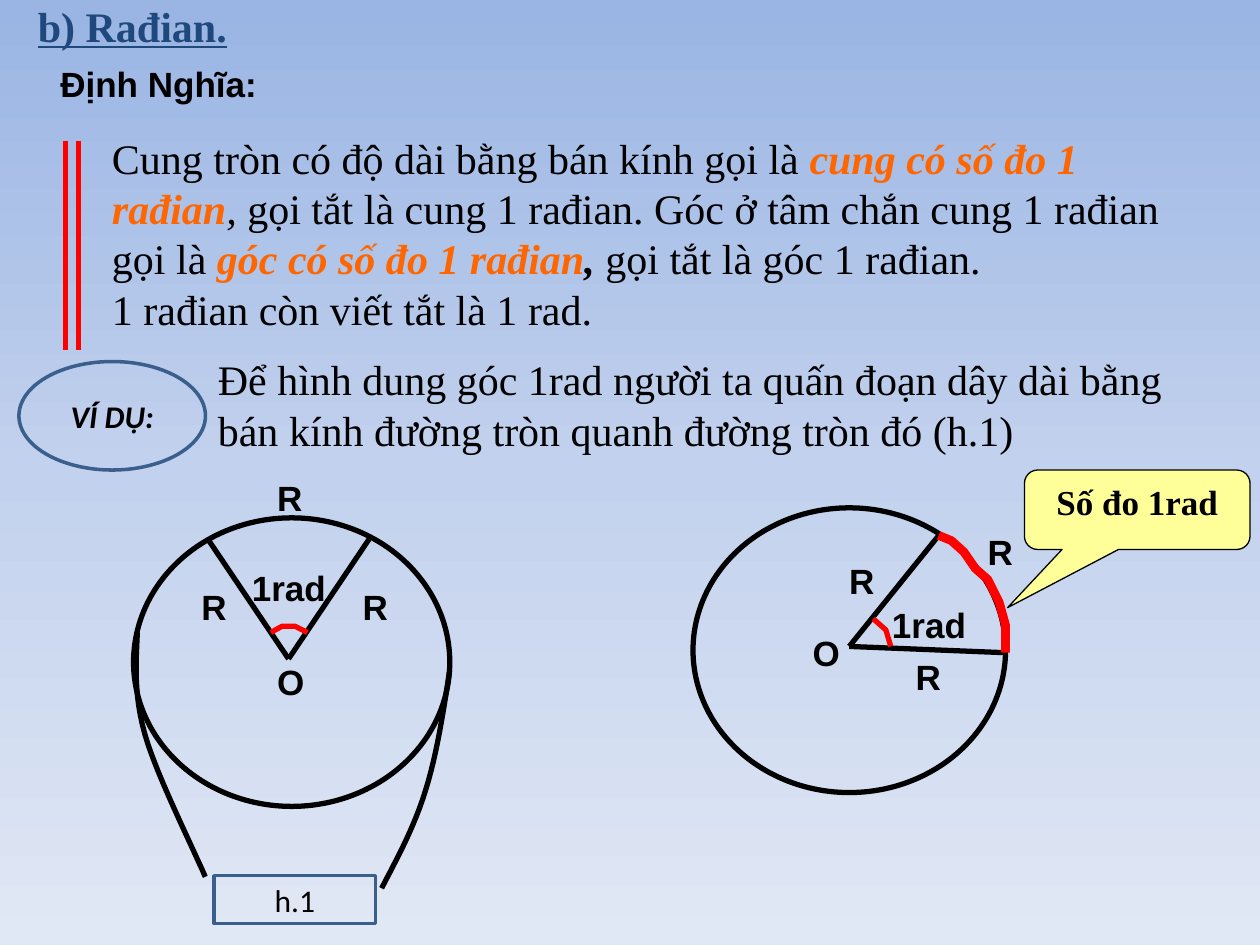
from copy import deepcopy

from lxml import etree
from pptx import Presentation
from pptx.dml.color import RGBColor
from pptx.enum import shapes, text
from pptx.oxml.ns import qn
from pptx.util import Pt

BLACK = RGBColor(0x00, 0x00, 0x00)
RED = RGBColor(0xFF, 0x00, 0x00)
ORANGE = RGBColor(0xFF, 0x66, 0x00)
NAVY = RGBColor(0x1F, 0x49, 0x7D)
STEEL = RGBColor(0x3A, 0x5F, 0x8C)
YELLOW = RGBColor(0xFF, 0xFF, 0x99)
SKY = [RGBColor(0x9A, 0xB5, 0xE4), RGBColor(0xC2, 0xD1, 0xED), RGBColor(0xE1, 0xE8, 0xF5)]

BODY = {"name": "Times New Roman", "size": Pt(24), "color": BLACK}
TERM = {**BODY, "bold": True, "italic": True, "color": ORANGE}
HEADING = {**BODY, "bold": True, "underline": True, "color": NAVY}
CALLOUT = {**BODY, "size": Pt(20), "bold": True}
LABEL = {"name": "Arial", "size": Pt(20), "bold": True, "color": BLACK}
CAPTION = {"name": "Calibri", "size": Pt(18), "color": BLACK}
SHAPE = shapes.MSO_SHAPE


def write(shape, paragraphs, align=text.PP_ALIGN.LEFT, anchor=text.MSO_ANCHOR.TOP):
    """Each paragraph is a list of (wording, format) pairs."""
    frame = shape.text_frame
    frame.vertical_anchor = anchor
    for index, spans in enumerate(paragraphs):
        para = frame.add_paragraph() if index else frame.paragraphs[0]
        para.alignment = align
        for wording, style in spans:
            span = para.add_run()
            span.text = wording
            for name, value in style.items():
                if name == "color":
                    span.font.color.rgb = value
                else:
                    setattr(span.font, name, value)


def add_text(page, box, paragraphs, wrap=True):
    shape = page.shapes.add_textbox(*map(Pt, box))
    shape.text_frame.word_wrap = wrap
    shape.text_frame.auto_size = text.MSO_AUTO_SIZE.SHAPE_TO_FIT_TEXT
    write(shape, paragraphs)


def outline(shape, color, width, fill=None):
    shape.shadow.inherit = False
    if fill is None:
        shape.fill.background()
    else:
        shape.fill.solid()
        shape.fill.fore_color.rgb = fill
    shape.line.color.rgb = color
    shape.line.width = Pt(width)


def add_outlined(page, kind, box, color, width, fill=None):
    shape = page.shapes.add_shape(kind, *map(Pt, box))
    outline(shape, color, width, fill)
    return shape


def add_line(page, start, end, color=BLACK, width=3):
    line = page.shapes.add_connector(shapes.MSO_CONNECTOR.STRAIGHT, *map(Pt, (*start, *end)))
    line.line.color.rgb = color
    line.line.width = Pt(width)
    etree.SubElement(line.element.spPr, qn("a:effectLst"))


def add_path(page, points, color=BLACK, width=3):
    first, *rest = [(Pt(x), Pt(y)) for x, y in points]
    builder = page.shapes.build_freeform(*first)
    builder.add_line_segments(rest, close=False)
    outline(builder.convert_to_shape(), color, width)


def bezier(points, steps=12):
    """Points along joined cubic curves, given as start then three points each."""
    curve = [points[0]]
    for k in range(0, len(points) - 1, 3):
        for step in range(1, steps + 1):
            t = step / steps
            weights = ((1 - t) ** 3, 3 * t * (1 - t) ** 2, 3 * t * t * (1 - t), t ** 3)
            curve.append(tuple(sum(w * p[axis] for w, p in zip(weights, points[k:k + 4]))
                               for axis in (0, 1)))
    return curve


def paint_background(page):
    fill = page.background.fill
    fill.gradient()
    fill.gradient_angle = 270
    stops = page.element.xpath(".//a:gsLst")[0]
    stops.insert(1, deepcopy(stops[0]))
    for stop, color, position in zip(fill.gradient_stops, SKY, (0, 0.5, 1)):
        stop.color.rgb = color
        stop.position = position


def heading(page, box):
    title = page.shapes.title
    title.left, title.top, title.width, title.height = map(Pt, box)
    write(title, [[("b) Rađian.", HEADING)]])


def definition(page, box):
    left, top, width, height = box
    add_text(page, (left, top, 230, 32), [[("Định Nghĩa:", LABEL)]])
    # Double rule beside the definition
    for x in (left + 10, left + 17.5):
        add_line(page, (x, top + 48), (x, top + height), RED, 2.75)
    add_text(page, (left + 29.5, top + 39.6, width - 29.5, 124), [
        [("Cung tròn có độ dài bằng bán kính gọi là ", BODY),
         ("cung có số đo 1 rađian", TERM),
         (", ", {**BODY, "italic": True}),
         ("gọi tắt là cung 1 rađian. Góc ở tâm chắn cung 1 rađian gọi là ", BODY),
         ("góc có số đo 1 rađian", TERM),
         (", ", {**TERM, "color": BLACK}),
         ("gọi tắt là góc 1 rađian.", BODY)],
        [("1 rađian còn viết tắt là 1 rad.", BODY)]])


def example(page, box):
    left, top, width, height = box
    add_text(page, (left + 106.6, top, width - 106.6, height),
             [[("Để hình dung góc 1rad người ta quấn đoạn dây dài bằng "
                "bán kính đường tròn quanh đường tròn đó (h.1)", BODY)]])
    badge = add_outlined(page, SHAPE.OVAL, (left, top + 7.9, 106.6, 62), STEEL, 2)
    write(badge, [[("VÍ DỤ:", {**CAPTION, "bold": True, "italic": True})]],
          text.PP_ALIGN.CENTER, text.MSO_ANCHOR.MIDDLE)


def circle_figure(page, box, center, ends, angle, labels, measure, paths):
    """Circle with two radii, an angle mark, labels and further (points, color, width)."""
    left, top = box[:2]

    def at(point):
        return left + point[0], top + point[1]

    add_outlined(page, SHAPE.OVAL, box, BLACK, 3)
    for end in ends:
        add_line(page, at(center), at(end))
    for points, color, width in [(angle, RED, 3), *paths]:
        add_path(page, [at(point) for point in points], color, width)
    for wording, *point in labels:
        add_text(page, (*at(point), 28.5, 28), [[(wording, LABEL)]], wrap=False)
    add_text(page, (*at(measure), 60, 28), [[("1rad", LABEL)]])


def wrapped_string_figure(page, box):
    left_string = [(2.2, 65.5), (1.4, 82.8), (0, 100.8), (6.5, 123.8),
                   (13, 146.9), (35.3, 191.5), (41, 205.2)]
    right_string = [(180.7, 87.1), (177.1, 110.9), (173.5, 134.6), (167, 155.5),
                    (160.6, 176.4), (151.2, 193.7), (141.8, 211.7)]
    circle_figure(
        page, box, (88.6, 80.6), [(42.5, 12.2), (134.6, 12.2)],
        [(78.5, 65.5), (85, 61.9), (92.2, 61.9), (99.4, 65.5)],
        [("R", 31.7, 35.3), ("R", 123.8, 35.3), ("O", 74.9, 77.8), ("R", 74.9, -27.4)],
        (60.5, 24.5),
        [(bezier(string), BLACK, 3) for string in (left_string, right_string)])
    caption = add_outlined(page, SHAPE.RECTANGLE,
                           (box[0] + 46.1, box[1] + 204.5, 92.2, 27.4), STEEL, 2)
    write(caption, [[("h.1", CAPTION)]], text.PP_ALIGN.CENTER, text.MSO_ANCHOR.MIDDLE)


def radian_figure(page, box):
    arc = [(140.4, 15.8), (147.6, 18.7), (154.8, 25.2), (161.3, 34.6), (168.5, 41),
           (175, 54), (178.6, 67), (178.6, 76.3), (178.6, 82.8)]
    circle_figure(
        page, box, (89.3, 79.2), [arc[0], arc[-1]],
        [(103, 63.4), (110.2, 69.8), (113, 79.2)],
        [("O", 61.2, 67), ("R", 82.1, 25.9), ("R", 120.2, 80.6), ("R", 161.3, 9.4)],
        (106.6, 51.1), [(arc, RED, 5)])
    callout = add_outlined(page, SHAPE.ROUNDED_RECTANGULAR_CALLOUT,
                           (box[0] + 189.4, box[1] - 21.6, 128.9, 45.4), BLACK, 0.75, YELLOW)
    for index, value in enumerate((-0.575, 1.232, 0.167)):
        callout.adjustments[index] = value
    write(callout, [[("Số đo 1rad", CALLOUT)]], text.PP_ALIGN.CENTER)


def main():
    deck = Presentation()
    deck.slide_width, deck.slide_height = Pt(720), Pt(540)
    page = deck.slides.add_slide(deck.slide_layouts[5])
    paint_background(page)
    heading(page, (14.4, -3.6, 143.3, 36))
    definition(page, (27.4, 32.4, 666.6, 167.8))
    radian_figure(page, (396, 290.2, 178.6, 162.7))
    wrapped_string_figure(page, (76.3, 295.9, 180.7, 164.9))
    example(page, (10.8, 198.7, 679, 65.5))
    deck.save("out.pptx")


if __name__ == "__main__":
    main()
